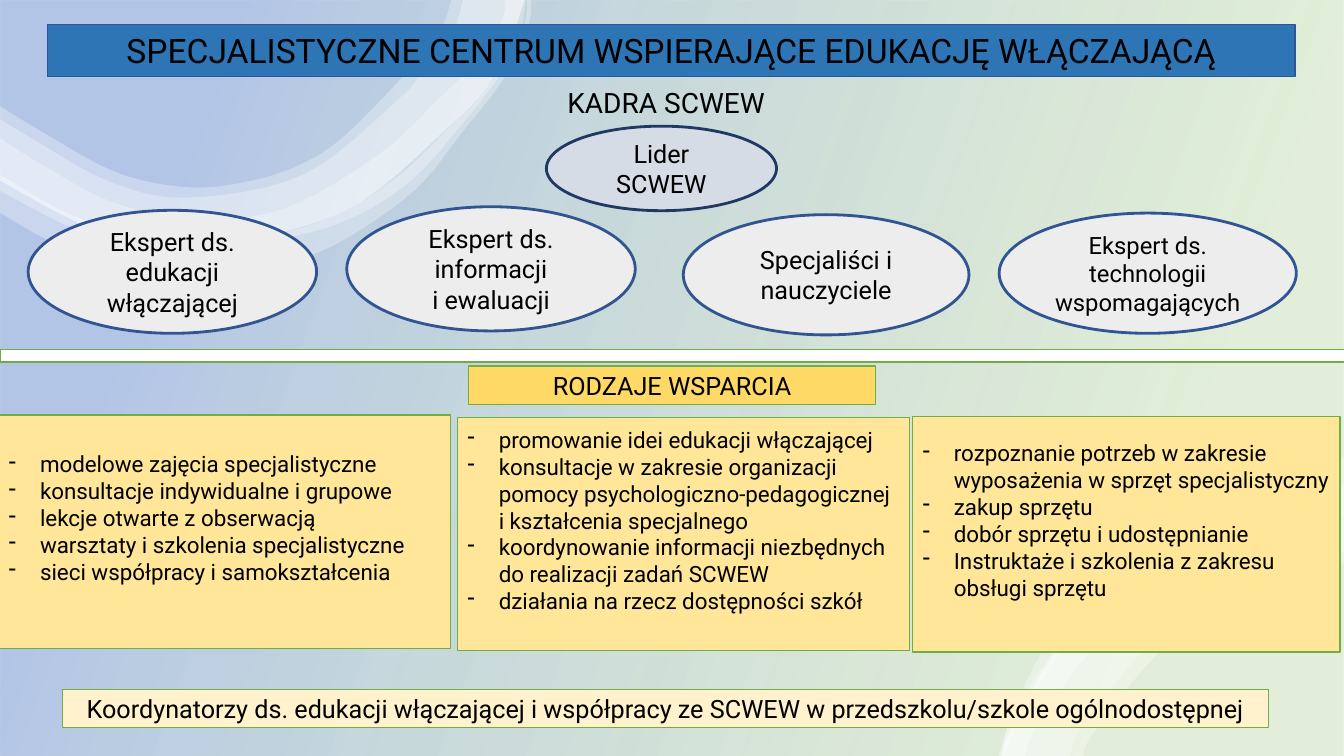
from lxml.etree import SubElement
from pptx import Presentation
from pptx.dml.color import RGBColor
from pptx.enum.shapes import MSO_SHAPE as Shape
from pptx.enum.text import MSO_ANCHOR as Anchor, MSO_AUTO_SIZE as AutoSize, PP_ALIGN as Align
from pptx.oxml.ns import qn
from pptx.util import Cm, Pt

FONT = "Roboto"
COLORS = {
    "text": "000000", "white": "FFFFFF", "green": "70AD47", "blue": "4472C4",
    "title": "2E75B6", "title_line": "2F5597",
    "leader": "D6DCE5", "leader_line": "203864",
    "expert": "EDEDED", "expert_line": "325491",
    "heading": "FFD966", "support": "FFE699", "coordinators": "FFF2CC",
}
EXPERTS = [
    ("Ekspert ds. edukacji włączającej", (0.71, 5.3, 7.27, 3.1), 18, "expert_line"),
    ("Ekspert ds. informacji\ni ewaluacji", (8.74, 5.21, 7.27, 3.13), 18, "expert_line"),
    ("Specjaliści i nauczyciele", (17.22, 5.41, 7.2, 3.03), 18, "expert_line"),
    ("Ekspert ds. technologii wspomagających", (25.18, 5.37, 7.49, 3.03), 17, "title_line"),
]
SUPPORT = [
    ((11.53, 10.52, 11.39, 5.88), [
        "promowanie idei edukacji włączającej",
        "konsultacje w zakresie organizacji pomocy psychologiczno-pedagogicznej\n"
        "i kształcenia specjalnego",
        "koordynowanie informacji niezbędnych do realizacji zadań SCWEW",
        "działania na rzecz dostępności szkół"]),
    ((-0.03, 10.46, 11.39, 5.88), [
        "modelowe zajęcia specjalistyczne",
        "konsultacje indywidualne i grupowe",
        "lekcje otwarte z obserwacją",
        "warsztaty i szkolenia specjalistyczne",
        "sieci współpracy i samokształcenia"]),
    ((23, 10.49, 10.77, 5.94), [
        "rozpoznanie potrzeb w zakresie wyposażenia w sprzęt specjalistyczny",
        "zakup sprzętu",
        "dobór sprzętu i udostępnianie",
        "Instruktaże i szkolenia z zakresu obsługi sprzętu"]),
]
LEFT_EDGE = [(-0.05, 4.52), (2.36, 5.77), (4.75, 6.2), (8.56, 5.38), (11.3, 3.2),
             (12.57, 1.75), (13.23, -0.03)]
RIGHT_EDGE = [(25.25, 19.05), (25.45, 18.44), (26.72, 16.26), (28.6, 14.45),
              (30.96, 13.11), (33.88, 12.29)]
WAVES = [
    ([(13.28, -0.03), (13.21, 0.64), (12.78, 1.57), (11.56, 2.95), (9.96, 4.5),
      (8, 5.61), (5.72, 6.07), (4.11, 6.07), (1.9, 5.46), (-0.05, 4.37)],
     [(-0.05, 5.33), (1.42, 6.15), (3.4, 6.81), (4.93, 6.88), (6.71, 6.71), (8.38, 6.2),
      (10.41, 4.83), (11.61, 3.38), (12.73, 1.93), (13.31, 0.66), (13.39, -0.03)]),
    ([(12.75, -0.03), (12.67, 0.46), (12.24, 1.27), (11.05, 2.51), (9.55, 3.89),
      (7.16, 5.26), (4.95, 5.51), (2.87, 5.11), (0.99, 4.11), (-0.05, 3.45)],
     [(-0.05, 4.78), (1.63, 5.66), (2.95, 6.12), (4.85, 6.3), (7.47, 5.94), (9.04, 5.41),
      (10.36, 4.55), (11.38, 3.45), (12.65, 1.83), (13.11, 0.86), (13.26, -0.03)]),
    ([(11.68, -0.03), (11.35, 0.97), (10.59, 1.88), (10.03, 2.51), (7.67, 4.39),
      (4.75, 4.98), (2.74, 4.57), (0.74, 3.45), (-0.05, 2.97)], LEFT_EDGE),
    ([(11.38, -0.03), (11.07, 0.86), (10.34, 1.73), (8.71, 3.4), (7.59, 4.14),
      (6.27, 4.57), (4.75, 4.72), (2.92, 4.34), (0.94, 3.25), (-0.05, 2.64)], LEFT_EDGE),
    ([(25.17, 19.05), (25.58, 17.78), (26.39, 16.21), (27.46, 14.78), (28.8, 13.56),
      (30.35, 12.57), (32.99, 11.66), (33.88, 11.51)],
     [(33.88, 12.32), (32.36, 12.67), (30.76, 13.31), (29.26, 14.15), (27.91, 15.19),
      (26.75, 16.43), (25.81, 17.86), (25.32, 19.05)]),
    (RIGHT_EDGE, [(33.88, 14.2), (32.28, 14.61), (29.51, 16.18), (27.61, 18.39),
                  (27.3, 19.05)]),
    ([(25.22, 19.05), (25.7, 17.68), (27.76, 14.99), (30.63, 13.11), (33.15, 12.32),
      (33.88, 12.19)],
     [(33.88, 13.03), (32.54, 13.31), (31.01, 13.87), (28.3, 15.54), (26.31, 17.98),
      (25.83, 19.05)]),
    (RIGHT_EDGE, [(33.88, 13.87), (32.16, 14.33), (29.31, 15.93), (27.33, 18.26),
                  (26.97, 19.05)]),
]


def color(name):
    return RGBColor.from_string(COLORS[name])


def set_opacity(shape, percents):
    for element, percent in zip(shape._element.spPr.iter(qn("a:srgbClr")), percents):
        SubElement(element, qn("a:alpha")).set("val", str(percent * 1000))


def paint(shape, fill, line=None, width=1):
    shape.fill.solid()
    shape.fill.fore_color.rgb = color(fill)
    if line:
        shape.line.color.rgb = color(line)
        shape.line.width = Pt(width)
    else:
        shape.line.fill.background()


def add_box(slide, kind, place, fill, line=None, width=1):
    shape = slide.shapes.add_shape(kind, *map(Cm, place))
    shape.shadow.inherit = False
    paint(shape, fill, line, width)
    return shape


def add_text(paragraph, text, size, align=Align.CENTER):
    paragraph.alignment = align
    for index, line in enumerate(text.split("\n")):
        if index:
            paragraph.add_line_break()
        run = paragraph.add_run()
        run.text = line
        run.font.name = FONT
        run.font.size = Pt(size)
        run.font.color.rgb = color("text")


def add_label(shape, text, size):
    frame = shape.text_frame
    frame.word_wrap = True
    frame.vertical_anchor = Anchor.MIDDLE
    add_text(frame.paragraphs[0], text, size)


def add_dash_list(shape, items):
    frame = shape.text_frame
    frame.word_wrap = True
    frame.vertical_anchor = Anchor.MIDDLE
    frame.margin_bottom = Cm(0.83)
    for index, item in enumerate(items):
        paragraph = frame.add_paragraph() if index else frame.paragraphs[0]
        add_text(paragraph, item, 16, Align.LEFT)
        properties = paragraph._p.get_or_add_pPr()
        properties.set("marL", str(Cm(0.79)))
        properties.set("indent", str(-Cm(0.79)))
        SubElement(properties, qn("a:buChar")).set("char", "-")


def smooth(points, steps=6):
    padded = [points[0], *points, points[-1]]
    curve = []
    for a, b, c, d in zip(padded, padded[1:], padded[2:], padded[3:]):
        for step in range(steps):
            t = step / steps
            curve.append(tuple(
                q + t * (r - p) / 2 + t ** 2 * (2 * p - 5 * q + 4 * r - s) / 2
                + t ** 3 * (3 * q - p - 3 * r + s) / 2
                for p, q, r, s in zip(a, b, c, d)))
    return curve + [points[-1]]


def add_wave(slide, upper, lower):
    points = [(Cm(x), Cm(y)) for x, y in smooth(upper) + smooth(lower)]
    builder = slide.shapes.build_freeform(*points[0])
    builder.add_line_segments(points[1:], close=True)
    shape = builder.convert_to_shape()
    shape.shadow.inherit = False
    paint(shape, "white")
    set_opacity(shape, [30])


def add_backdrop(slide):
    shape = add_box(slide, Shape.RECTANGLE, (0, 0, 33.87, 19.05), "white")
    shape.fill.gradient()
    shape.fill.gradient_angle = 160
    stops = zip(shape.fill.gradient_stops, ("green", "blue"), (0.16, 0.85))
    for stop, name, position in stops:
        stop.color.rgb = color(name)
        stop.position = position
    set_opacity(shape, [20, 40])
    for upper, lower in WAVES:
        add_wave(slide, upper, lower)


def add_title(slide, text):
    title = slide.shapes.title
    slide.shapes._spTree.append(title._element)
    title.left, title.top, title.width, title.height = map(Cm, (1.19, 0.61, 31.45, 1.32))
    SubElement(title._element.spPr, qn("a:prstGeom")).set("prst", "roundRect")
    paint(title, "title", "title_line")
    title.text_frame.auto_size = AutoSize.NONE
    add_label(title, text, 24)
    title.text_frame.paragraphs[0].line_spacing = 1.0


def add_staff_heading(slide, text):
    frame = slide.shapes.add_textbox(*map(Cm, (13.54, 2.03, 7.8, 1.12))).text_frame
    frame.word_wrap = True
    frame.margin_left = Cm(0.76)
    add_text(frame.paragraphs[0], text, 20, Align.LEFT)


def main():
    presentation = Presentation()
    presentation.slide_width, presentation.slide_height = Cm(33.87), Cm(19.05)
    slide = presentation.slides.add_slide(presentation.slide_layouts[5])
    add_backdrop(slide)
    add_title(slide, "SPECJALISTYCZNE CENTRUM WSPIERAJĄCE EDUKACJĘ WŁĄCZAJĄCĄ")
    add_staff_heading(slide, "KADRA SCWEW")
    leader = add_box(slide, Shape.OVAL, (13.77, 3.18, 5.8, 2.13), "leader", "leader_line", 2)
    add_label(leader, "Lider\nSCWEW", 18)
    for text, place, size, line in EXPERTS:
        add_label(add_box(slide, Shape.OVAL, place, "expert", line, 2), text, size)
    add_box(slide, Shape.RECTANGLE, (0, 8.81, 33.9, 0.31), "white", "green")
    heading = add_box(slide, Shape.RECTANGLE, (11.81, 9.22, 10.26, 0.97), "heading", "green")
    add_label(heading, "RODZAJE WSPARCIA", 18)
    coordinators = add_box(slide, Shape.RECTANGLE, (1.57, 17.37, 30.4, 0.97),
                           "coordinators", "green")
    add_label(coordinators, "Koordynatorzy ds. edukacji włączającej i współpracy ze SCWEW "
              "w przedszkolu/szkole ogólnodostępnej", 18)
    for place, items in SUPPORT:
        add_dash_list(add_box(slide, Shape.RECTANGLE, place, "support", "green"), items)
    presentation.save("out.pptx")


if __name__ == "__main__":
    main()
